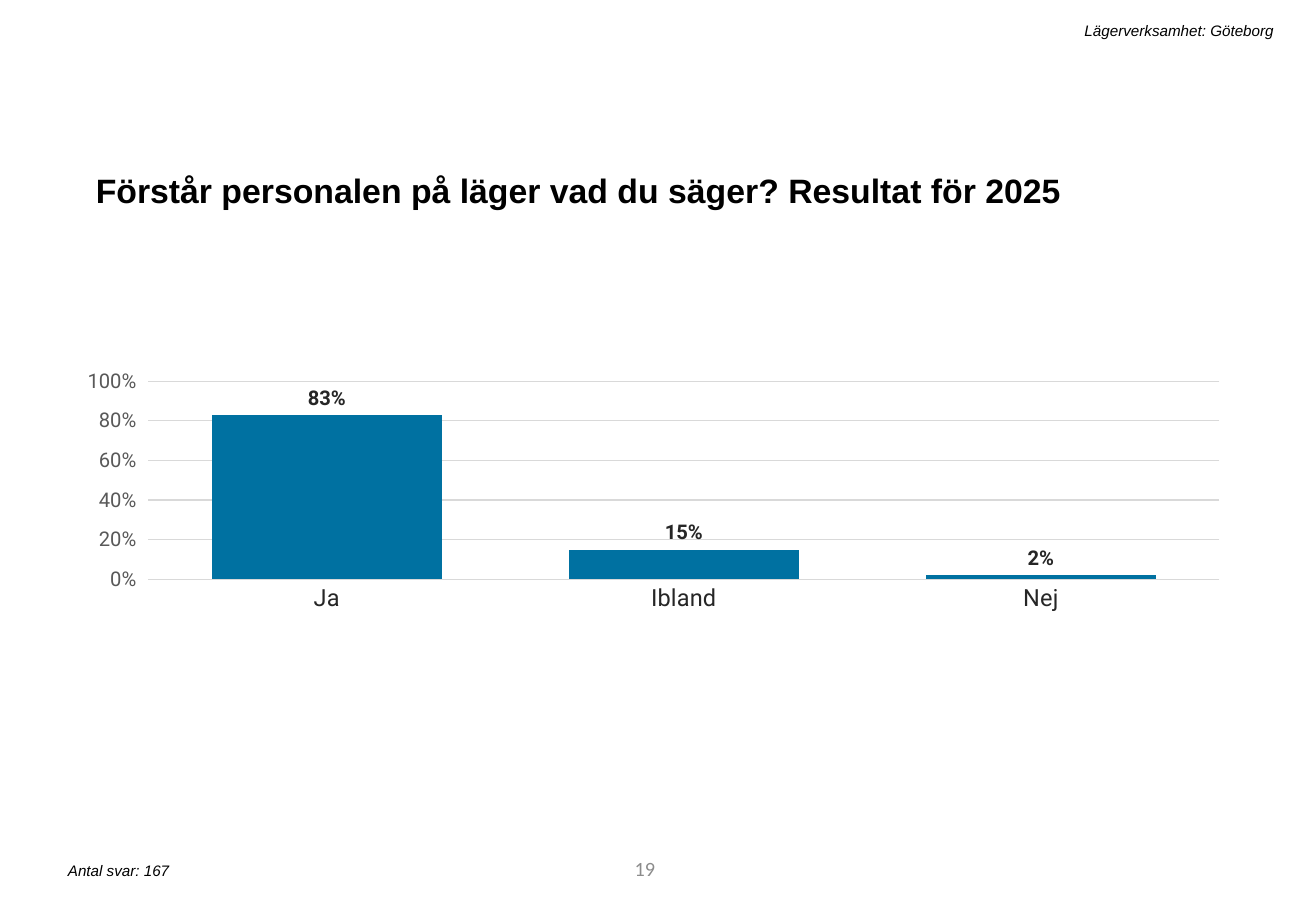
import pptx
import pptx.chart.data
import pptx.dml.color
import pptx.enum.chart
import pptx.enum.text
import pptx.oxml
import pptx.util
from pptx.oxml.ns import nsdecls

COLORS = {"ink": "000000", "number": "8C8C8C", "bar": "0071A1",
          "label": "262626", "axis": "595959", "grid": "D9D9D9"}
ALIGN = pptx.enum.text.PP_ALIGN
ANCHOR = pptx.enum.text.MSO_ANCHOR
AUTO = pptx.enum.text.MSO_AUTO_SIZE
XL = pptx.enum.chart


def rgb(name):
    return pptx.dml.color.RGBColor.from_string(COLORS[name])


def style_font(font, size, color="ink", name="Arial", bold=False, italic=False):
    font.size = pptx.util.Pt(size)
    font.name = name
    font.bold = bold
    font.italic = italic
    font.color.rgb = rgb(color)


def write(tf, text, align=ALIGN.LEFT, spacing=None, before=None, **font):
    p = tf.paragraphs[0]
    p.alignment = align
    p.line_spacing = spacing
    if before is not None:
        p.space_before = pptx.util.Pt(before)
    r = p.add_run()
    r.text = text
    style_font(r.font, **font)


class Page:
    """Draws elements placed in percent of the slide's width and height."""

    def __init__(self, prs):
        self.width, self.height = prs.slide_width, prs.slide_height
        self.s = prs.slides.add_slide(prs.slide_layouts[6])

    def box(self, left, top, width, height):
        return (int(self.width * left / 100), int(self.height * top / 100),
                int(self.width * width / 100), int(self.height * height / 100))

    def text(self, text, *at, anchor=ANCHOR.TOP, grow=True, **fmt):
        tf = self.s.shapes.add_textbox(*self.box(*at)).text_frame
        tf.word_wrap = True
        tf.auto_size = AUTO.SHAPE_TO_FIT_TEXT if grow else AUTO.NONE
        tf.vertical_anchor = anchor
        write(tf, text, **fmt)

    def columns(self, answers, plot, *at):
        data = pptx.chart.data.CategoryChartData(number_format="0%")
        data.categories = list(answers)
        data.add_series("Series 1", list(answers.values()))
        chart = self.s.shapes.add_chart(
            XL.XL_CHART_TYPE.COLUMN_CLUSTERED, *self.box(*at), data).chart
        chart.has_legend = False
        chart.has_title = False
        style_font(chart.font, 10, name="Roboto")
        self.axes(chart)
        self.bars(chart.plots[0])
        x, y, w, h = plot
        area = chart.plots[0]._element.getparent()
        for old in area.findall("{*}layout"):
            area.remove(old)
        area.insert(0, pptx.oxml.parse_xml(
            f'<c:layout {nsdecls("c")}><c:manualLayout>'
            '<c:layoutTarget val="inner"/><c:xMode val="edge"/><c:yMode val="edge"/>'
            f'<c:x val="{x}"/><c:y val="{y}"/><c:w val="{w}"/><c:h val="{h}"/>'
            '</c:manualLayout></c:layout>'))

    def axes(self, chart):
        cat, val = chart.category_axis, chart.value_axis
        cat.major_tick_mark = XL.XL_TICK_MARK.NONE
        val.major_tick_mark = XL.XL_TICK_MARK.OUTSIDE
        val.minimum_scale, val.maximum_scale, val.major_unit = 0, 1, 0.2
        val.tick_labels.number_format = "0%"
        val.tick_labels.number_format_is_linked = False
        val.has_major_gridlines = True
        val.format.line.fill.background()
        for line in (cat.format.line, val.major_gridlines.format.line):
            line.color.rgb = rgb("grid")
            line.width = pptx.util.Pt(0.75)
        style_font(cat.tick_labels.font, 14, "label", "Roboto")
        style_font(val.tick_labels.font, 12, "axis", "Roboto")

    def bars(self, plot):
        plot.gap_width = 55
        plot.vary_by_categories = False
        series = plot.series[0]
        series.invert_if_negative = False
        series.format.fill.solid()
        series.format.fill.fore_color.rgb = rgb("bar")
        labels = series.data_labels
        labels.show_value = True
        labels.position = XL.XL_LABEL_POSITION.OUTSIDE_END
        labels.number_format = "0%"
        labels.number_format_is_linked = False
        style_font(labels.font, 12, "label", "Roboto", bold=True)


def main():
    prs = pptx.Presentation()
    prs.slide_width = pptx.util.Inches(10.83)
    prs.slide_height = pptx.util.Inches(7.5)
    page = Page(prs)
    page.text("19", 28.16, 92.67, 22.53, 5.33, anchor=ANCHOR.MIDDLE, grow=False,
              align=ALIGN.RIGHT, size=12, color="number", name="Calibri")
    page.text("Förstår personalen på läger vad du säger? Resultat för 2025",
              6.37, 17.07, 86.8, 6.27, spacing=1.2, before=10, size=20, bold=True)
    page.text("Antal svar: 167", 4.25, 93.87, 40.72, 3.33, size=9, italic=True)
    page.columns({"Ja": 0.83, "Ibland": 0.15, "Nej": 0.02},
                 (0.05, 0.154, 0.941, 0.413), 6.65, 33.73, 86.8, 52.67)
    page.text("Lägerverksamhet: Göteborg", 15.88, 1.73, 81.81, 3.33,
              align=ALIGN.RIGHT, size=9, italic=True)
    prs.save("out.pptx")


if __name__ == "__main__":
    main()
